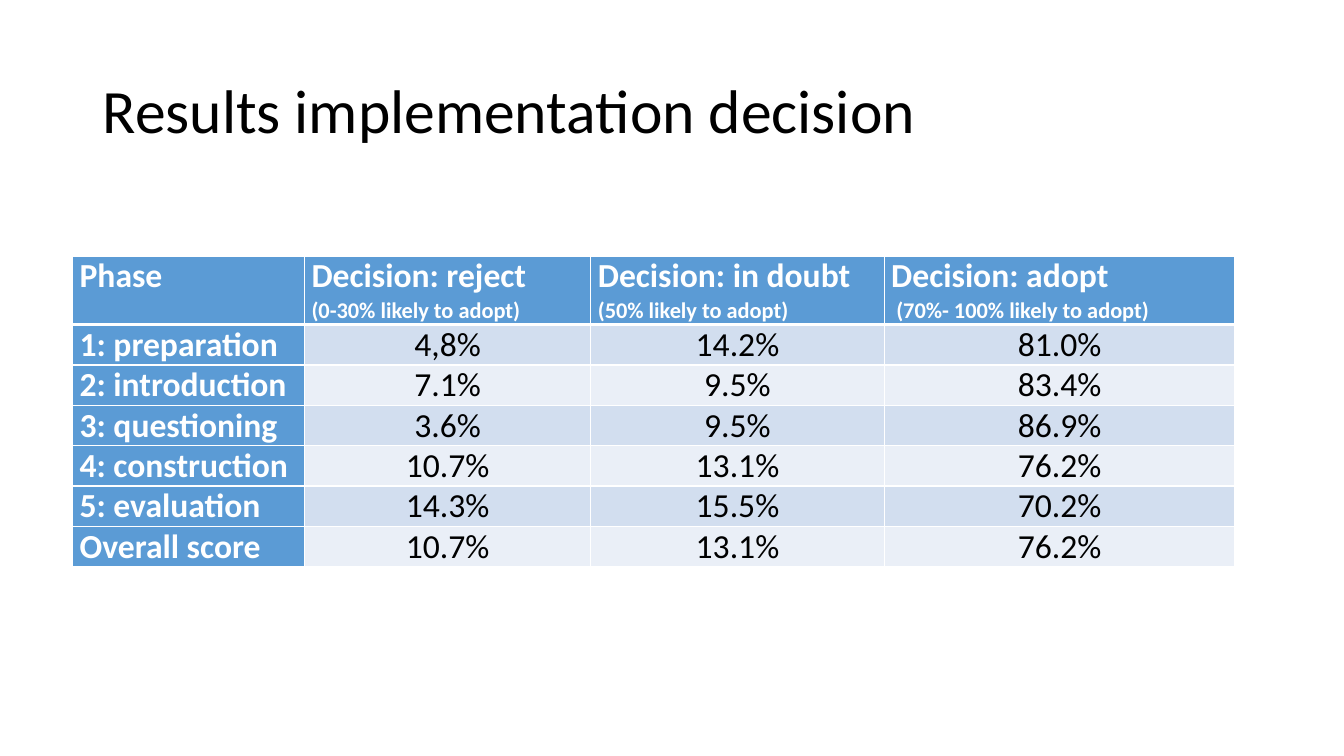
"""Build the slide with the implementation decision results per phase."""
from lxml import etree
from pptx import Presentation
from pptx import util as u
from pptx.dml.color import RGBColor
from pptx.enum import text
from pptx.oxml.ns import qn

TITLE = "Results implementation decision"
HEADERS = [
    ("Phase",),
    ("Decision: reject", "(0-30% likely to adopt)"),
    ("Decision: in doubt", "(50% likely to adopt)"),
    ("Decision: adopt", " (70%- 100% likely to adopt)"),
]
SCORES = [
    ("1: preparation", "4,8%", "14.2%", "81.0%"),
    ("2: introduction", "7.1%", "9.5%", "83.4%"),
    ("3: questioning", "3.6%", "9.5%", "86.9%"),
    ("4: construction", "10.7%", "13.1%", "76.2%"),
    ("5: evaluation", "14.3%", "15.5%", "70.2%"),
    ("Overall score", "10.7%", "13.1%", "76.2%"),
]
FONT = "Calibri"
BLUE, WHITE, BLACK = "5B9BD5", "FFFFFF", "000000"
BANDS = ("D2DEEF", "EAEFF7")
TITLE_BOX = (92, 40, 1150, 145)
TABLE_LEFT, TABLE_TOP = 72, 254
COLUMN_WIDTHS = (230, 284, 291, 348)
HEADER_HEIGHT, ROW_HEIGHT = 68, 40
CELL_INSET = 7
THIN, THICK = 1, 3


def px(length):
    return u.Emu(length * 9144)


def color(value):
    return RGBColor.from_string(value)


def add_span(para, words, size, shade, bold=False):
    span = para.add_run()
    span.text = words
    span.font.name, span.font.size, span.font.bold = FONT, u.Pt(size), bold
    span.font.color.rgb = color(shade)


def add_borders(cell, top, bottom):
    properties = cell._tc.get_or_add_tcPr()
    for side, width in (("L", THIN), ("R", THIN), ("T", top), ("B", bottom)):
        line = etree.SubElement(properties, qn(f"a:ln{side}"), w=str(u.Pt(width)))
        fill = etree.SubElement(line, qn("a:solidFill"))
        etree.SubElement(fill, qn("a:srgbClr"), val=WHITE)


def fill_cell(cell, lines, row, column):
    is_label = row == 0 or column == 0
    add_borders(cell, THICK if row == 1 else THIN, THICK if row == 0 else THIN)
    cell.fill.solid()
    cell.fill.fore_color.rgb = color(BLUE if is_label else BANDS[(row - 1) % 2])
    cell.margin_left = cell.margin_right = px(CELL_INSET)
    cell.margin_top = cell.margin_bottom = 0
    frame = cell.text_frame
    for index, words in enumerate(lines):
        para = frame.add_paragraph() if index else frame.paragraphs[0]
        para.alignment = text.PP_ALIGN.LEFT if is_label else text.PP_ALIGN.CENTER
        add_span(para, words, 16 if index else 24, WHITE if is_label else BLACK, is_label)


def add_title(page):
    box = page.shapes.add_textbox(*map(px, TITLE_BOX))
    box.text_frame.word_wrap = True
    box.text_frame.vertical_anchor = text.MSO_ANCHOR.MIDDLE
    para = box.text_frame.paragraphs[0]
    para.line_spacing = 0.9
    add_span(para, TITLE, 44, BLACK)


def add_scores(page):
    rows = [HEADERS] + [[(words,) for words in score] for score in SCORES]
    heights = [HEADER_HEIGHT] + [ROW_HEIGHT] * len(SCORES)
    table = page.shapes.add_table(
        len(rows), len(COLUMN_WIDTHS), px(TABLE_LEFT), px(TABLE_TOP),
        px(sum(COLUMN_WIDTHS)), px(sum(heights))).table
    for column, width in zip(table.columns, COLUMN_WIDTHS):
        column.width = px(width)
    for row, (cells, height) in enumerate(zip(rows, heights)):
        table.rows[row].height = px(height)
        for column, lines in enumerate(cells):
            fill_cell(table.cell(row, column), lines, row, column)


def main():
    deck = Presentation()
    deck.slide_width, deck.slide_height = px(1333), px(750)
    page = deck.slides.add_slide(deck.slide_layouts[6])
    add_title(page)
    add_scores(page)
    deck.save("out.pptx")


if __name__ == "__main__":
    main()
